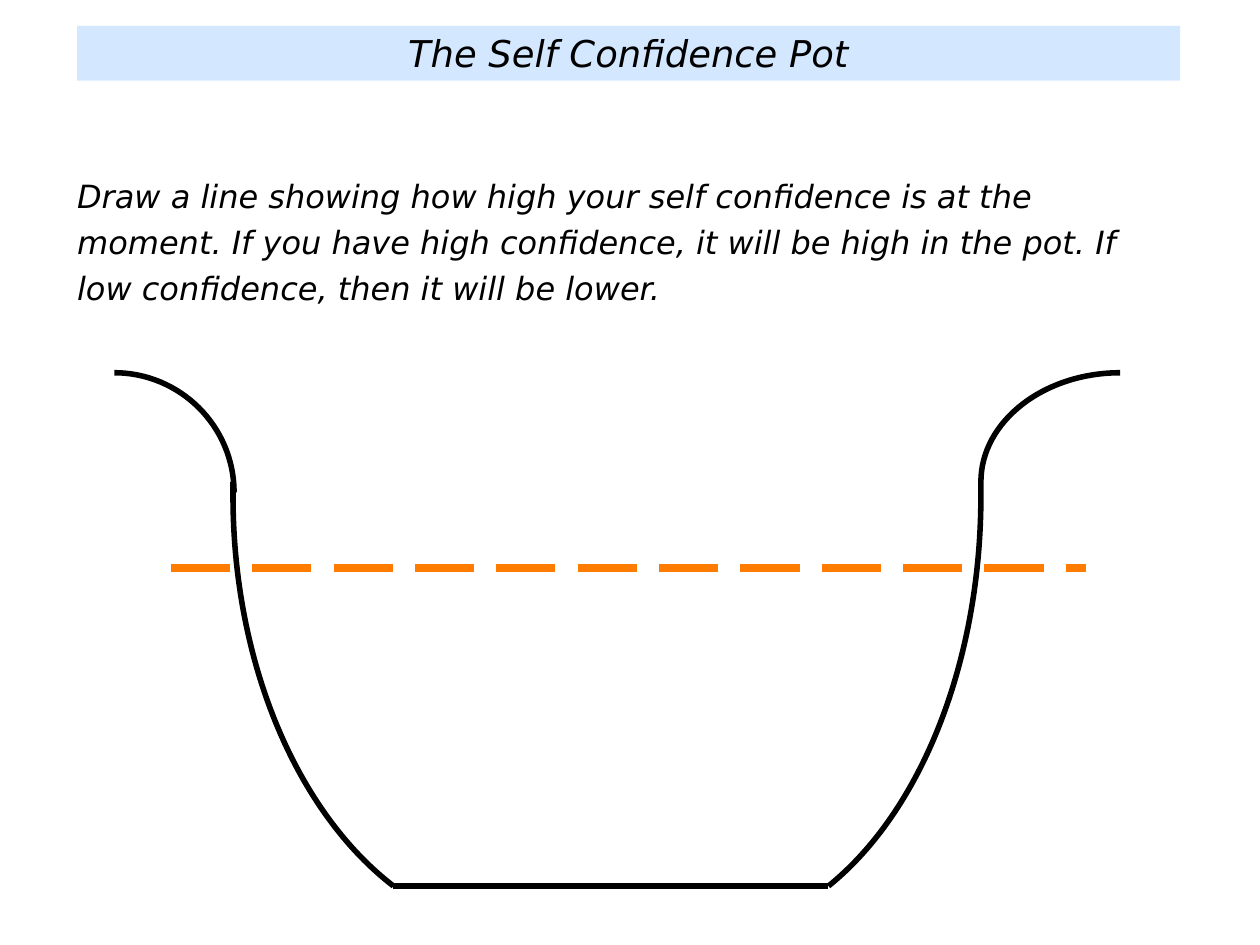
from dataclasses import dataclass

from lxml.etree import SubElement
from pptx import Presentation
from pptx.dml.color import RGBColor
from pptx.enum.dml import MSO_LINE
from pptx.enum.shapes import MSO_CONNECTOR
from pptx.enum.text import MSO_ANCHOR, MSO_AUTO_SIZE, PP_ALIGN
from pptx.oxml.ns import qn
from pptx.util import Cm, Pt


@dataclass(frozen=True)
class Theme:
    font: str = "DejaVu Sans"
    ink: RGBColor = RGBColor(0x00, 0x00, 0x00)
    banner: RGBColor = RGBColor(0xD3, 0xE8, 0xFF)
    level: RGBColor = RGBColor(0xFF, 0x7C, 0x00)
    title_size: Pt = Pt(30)
    body_size: Pt = Pt(26)
    pot_width: Pt = Pt(4.5)
    level_width: Pt = Pt(6)


THEME = Theme()
INSET = Cm(0.15)

# Pot geometry in centimetres
RIM_TOP, NECK, WALL_TOP, BASE = 10.69, 13.82, 14.22, 25.41
BASE_LEFT, BASE_RIGHT = 11.28, 23.75
WALL_LEFT, WALL_RIGHT = 6.68, 28.12

# A start point, then two control points and an end for each curve
POT_OUTLINES = [
    # Right wall and rim
    [(BASE_RIGHT, BASE), (26.44, 23.24), (WALL_RIGHT, 18.92), (WALL_RIGHT, WALL_TOP),
     (WALL_RIGHT, 14.09), (WALL_RIGHT, 13.95), (WALL_RIGHT, NECK)],
    [(32.11, RIM_TOP), (29.92, RIM_TOP), (WALL_RIGHT, 12.09), (WALL_RIGHT, NECK)],
    # Left wall and rim
    [(BASE_LEFT, BASE), (8.46, 23.24), (WALL_LEFT, 18.92), (WALL_LEFT, WALL_TOP),
     (WALL_LEFT, 14.09), (WALL_LEFT, 13.95), (WALL_LEFT, NECK)],
    [(3.28, RIM_TOP), (5.16, RIM_TOP), (6.71, 12.22), (6.71, 14.12)],
]


def apply(target, values):
    for attribute, value in values.items():
        setattr(target, attribute, value)


def fill_placeholder(holder, text, box, size, anchor, paragraph_format):
    left, top, width, height = map(Cm, box)
    apply(holder, dict(left=left, top=top, width=width, height=height))
    frame = holder.text_frame
    frame.text = text
    apply(frame, dict(
        word_wrap=True, auto_size=MSO_AUTO_SIZE.NONE, vertical_anchor=anchor,
        margin_left=INSET, margin_right=INSET, margin_top=INSET, margin_bottom=INSET))
    paragraph = frame.paragraphs[0]
    apply(paragraph, dict(space_before=Pt(0), **paragraph_format))
    font = paragraph.runs[0].font
    apply(font, dict(name=THEME.font, size=size, italic=True))
    font.color.rgb = THEME.ink
    return holder


def remove_bullet(paragraph):
    properties = paragraph._p.get_or_add_pPr()
    properties.set("marL", "0")
    properties.set("indent", "0")
    SubElement(properties, qn("a:buNone"))


def style_line(line, color, width):
    line.color.rgb = color
    line.width = width


def bend_segments(outline):
    """Turn every three straight segments into one cubic curve."""
    segments = list(outline._element.iter(qn("a:lnTo")))
    for first in range(0, len(segments), 3):
        curve = SubElement(segments[first].getparent(), qn("a:cubicBezTo"))
        for segment in segments[first:first + 3]:
            curve.append(segment[0])
            segment.getparent().remove(segment)


def add_curve(slide, points):
    start, *rest = [(Cm(x), Cm(y)) for x, y in points]
    builder = slide.shapes.build_freeform(*start)
    builder.add_line_segments(rest, close=False)
    outline = builder.convert_to_shape()
    bend_segments(outline)
    outline.shadow.inherit = False
    outline.fill.background()
    style_line(outline.line, THEME.ink, THEME.pot_width)


def add_level_line(slide, left, right, height, color, width, dash=None):
    connector = slide.shapes.add_connector(
        MSO_CONNECTOR.STRAIGHT, Cm(left), Cm(height), Cm(right), Cm(height))
    style_line(connector.line, color, width)
    if dash:
        connector.line.dash_style = dash
    SubElement(connector._element.spPr, qn("a:effectLst"))


def main():
    presentation = Presentation()
    apply(presentation, dict(slide_width=Cm(36.12), slide_height=Cm(27.1)))
    slide = presentation.slides.add_slide(presentation.slide_layouts[1])

    # Title banner
    banner = fill_placeholder(
        slide.shapes.title, "The Self Confidence Pot", (2.21, 0.74, 31.62, 1.57),
        THEME.title_size, MSO_ANCHOR.MIDDLE, dict(alignment=PP_ALIGN.CENTER))
    banner.fill.solid()
    banner.fill.fore_color.rgb = THEME.banner

    # Instructions
    instructions = fill_placeholder(
        slide.placeholders[1],
        "Draw a line showing how high your self confidence is at the moment. "
        "If you have high confidence, it will be high in the pot. "
        "If low confidence, then it will be lower.",
        (2.06, 4.69, 31.9, 5.36), THEME.body_size, MSO_ANCHOR.TOP,
        dict(alignment=PP_ALIGN.LEFT, line_spacing=1.2))
    remove_bullet(instructions.text_frame.paragraphs[0])

    # Pot sides
    for points in POT_OUTLINES:
        add_curve(slide, points)

    # Confidence level
    add_level_line(slide, 4.9, 31.14, 16.29, THEME.level, THEME.level_width,
                   MSO_LINE.LONG_DASH)

    # Pot base
    add_level_line(slide, BASE_LEFT, BASE_RIGHT, BASE, THEME.ink, THEME.pot_width)

    presentation.save("out.pptx")


if __name__ == "__main__":
    main()
